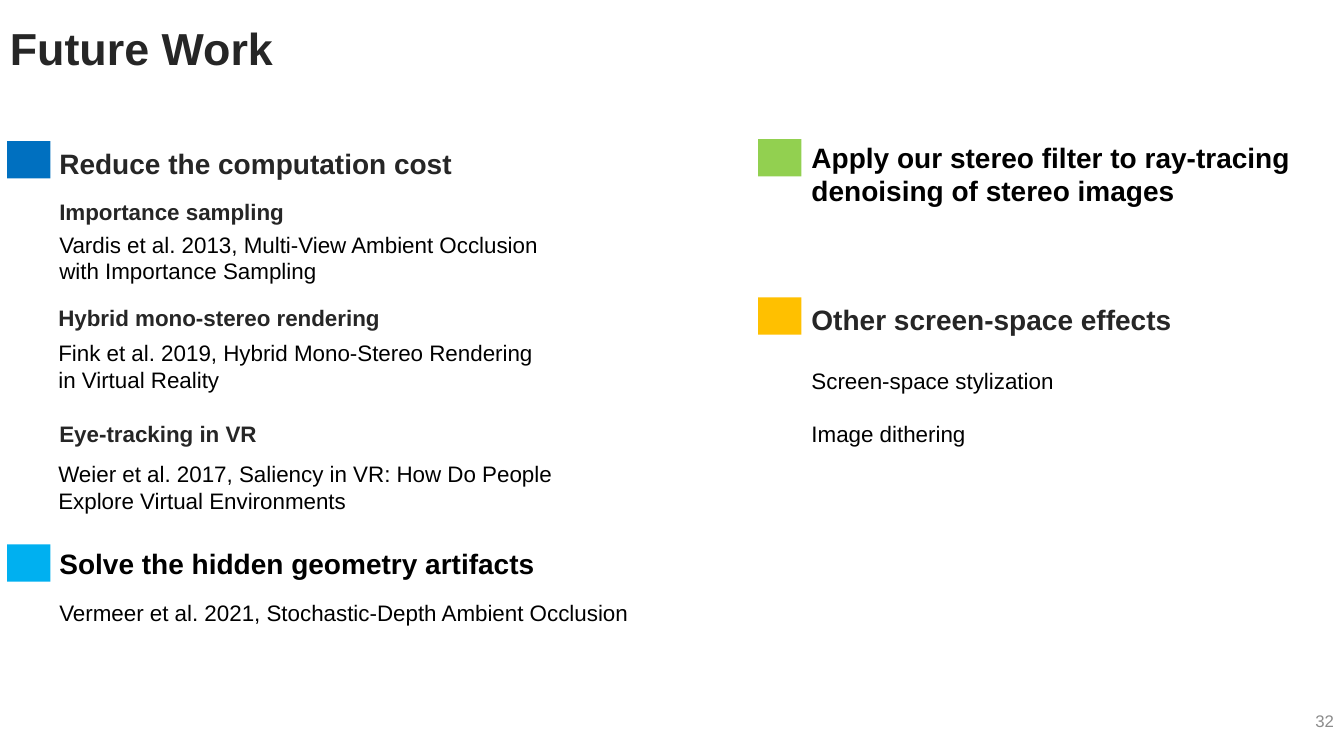
from pptx import Presentation
from pptx.dml.color import RGBColor
from pptx.enum.shapes import MSO_SHAPE
from pptx.enum.text import MSO_ANCHOR, PP_ALIGN
from pptx.util import Inches, Pt

RECTANGLE = MSO_SHAPE.RECTANGLE
TOP, MIDDLE = MSO_ANCHOR.TOP, MSO_ANCHOR.MIDDLE
LEFT, RIGHT = PP_ALIGN.LEFT, PP_ALIGN.RIGHT

COLORS = {
    "heading": "262626",
    "body": "000000",
    "number": "8C8C8C",
    "blue": "0070C0",
    "sky": "00B0F0",
    "amber": "FFC000",
    "green": "92D050",
}

# text, left, top, width, height, colour
TOPICS = [
    ("Reduce the computation cost", 0.49, 1.4, 5.34, 0.44, "heading"),
    ("Solve the hidden geometry artifacts", 0.49, 5.37, 6.62, 0.44, "body"),
    ("Apply our stereo filter to ray-tracing denoising of stereo images",
     7.95, 1.34, 5.38, 0.77, "body"),
    ("Other screen-space effects", 7.95, 2.95, 5.34, 0.44, "heading"),
]

# left, top, colour
MARKERS = [
    (0.07, 1.4, "blue"),
    (0.07, 5.4, "sky"),
    (7.52, 1.38, "green"),
    (7.52, 2.95, "amber"),
]

# text, left, top, width
APPROACHES = [
    ("Importance sampling", 0.49, 1.92, 3.16),
    ("Hybrid mono-stereo rendering", 0.48, 2.97, 3.99),
    ("Eye-tracking in VR", 0.49, 4.12, 2.62),
]

# text, left, top, width, height, space between paragraphs in points
DETAILS = [
    ("Vardis et al. 2013, Multi-View Ambient Occlusion with Importance Sampling",
     0.49, 2.24, 5.2, 0.64, 0),
    ("Fink et al. 2019, Hybrid Mono-Stereo Rendering\nin Virtual Reality",
     0.48, 3.32, 5.11, 0.64, 0),
    ("Weier et al. 2017, Saliency in VR: How Do People Explore Virtual Environments",
     0.48, 4.52, 5.11, 0.64, 0),
    ("Vermeer et al. 2021, Stochastic-Depth Ambient Occlusion",
     0.49, 5.89, 6.78, 0.37, 0),
    ("Screen-space stylization\nImage dithering", 7.95, 3.59, 4.38, 0.91, 19),
]


class SlideBuilder:
    """Holds the slide being built and its shared style."""

    font_name = "Arial"

    def __init__(self, slide):
        self.slide = slide

    def text(self, content, left, top, width, height, *, size=16, color="body",
             bold=False, align=LEFT, anchor=TOP, line_spacing=None, gap=0):
        """Add a text box with one paragraph for each line of content."""
        box = self.slide.shapes.add_textbox(
            Inches(left), Inches(top), Inches(width), Inches(height))
        frame = box.text_frame
        frame.word_wrap = True
        frame.vertical_anchor = anchor
        frame.text = content
        for index, paragraph in enumerate(frame.paragraphs):
            paragraph.alignment = align
            paragraph.line_spacing = line_spacing
            if index and gap:
                paragraph.space_before = Pt(gap)
            font = paragraph.font
            font.name = self.font_name
            font.size = Pt(size)
            font.bold = bold
            font.color.rgb = RGBColor.from_string(COLORS[color])

    def marker(self, left, top, color):
        square = self.slide.shapes.add_shape(
            RECTANGLE, Inches(left), Inches(top), Inches(0.43), Inches(0.37))
        square.shadow.inherit = False
        square.fill.solid()
        square.fill.fore_color.rgb = RGBColor.from_string(COLORS[color])
        square.line.fill.background()


def main():
    deck = Presentation()
    deck.slide_width, deck.slide_height = Inches(13.33), Inches(7.5)
    builder = SlideBuilder(deck.slides.add_slide(deck.slide_layouts[6]))

    builder.text("Future Work", 0, 0, 11.5, 1.02, size=32, color="heading",
                 bold=True, anchor=MIDDLE, line_spacing=0.9)
    for topic, left, top, width, height, color in TOPICS:
        builder.text(topic, left, top, width, height, size=20, color=color, bold=True)
    for left, top, color in MARKERS:
        builder.marker(left, top, color)
    for approach, left, top, width in APPROACHES:
        builder.text(approach, left, top, width, 0.37, color="heading", bold=True)
    for detail, left, top, width, height, gap in DETAILS:
        builder.text(detail, left, top, width, height, gap=gap)
    builder.text("32", 12.72, 6.95, 0.61, 0.4, size=12, color="number",
                 align=RIGHT, anchor=MIDDLE)

    deck.save("out.pptx")


if __name__ == "__main__":
    main()
